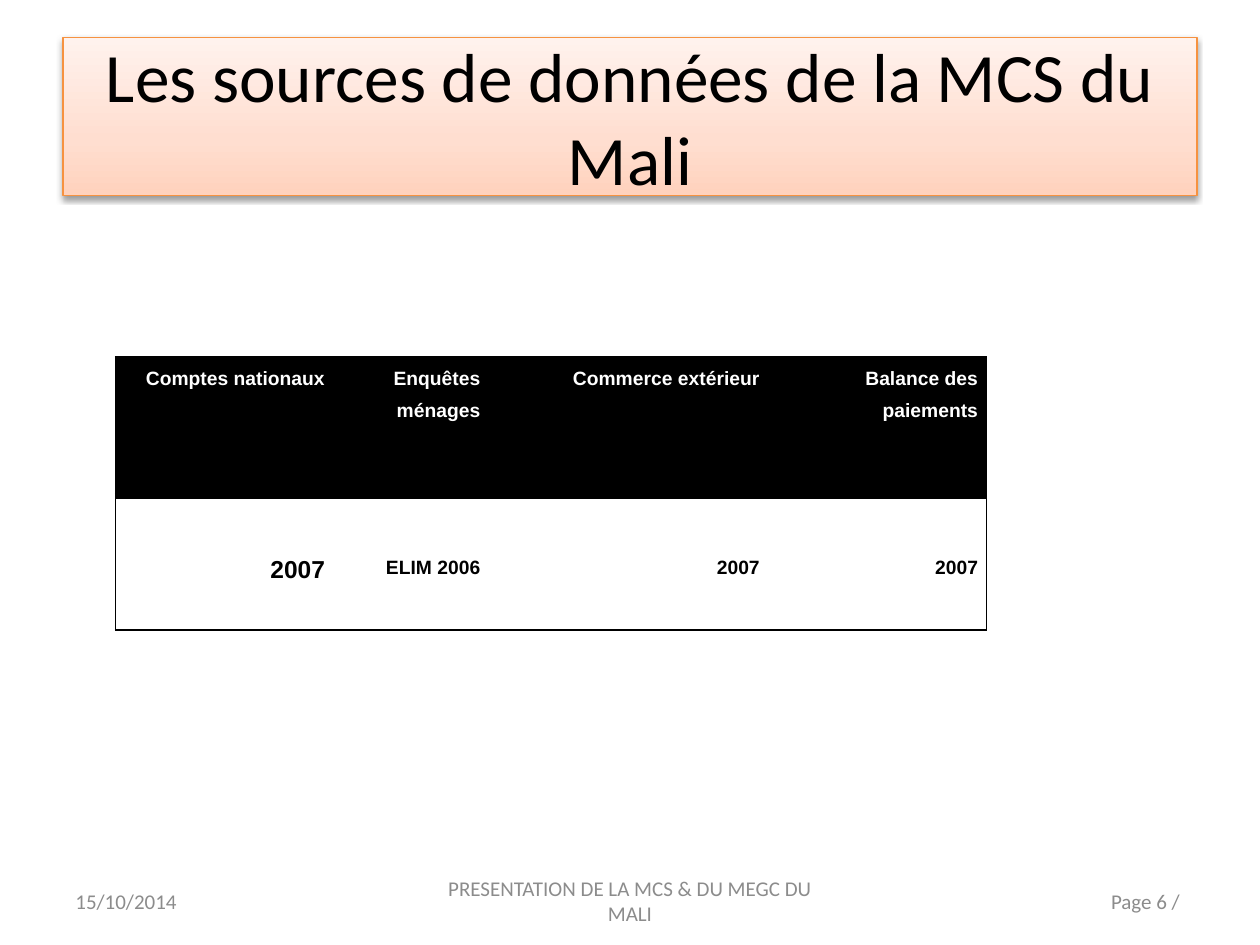
"""Build the slide on the data sources of the Mali social accounting matrix."""
from dataclasses import dataclass

from lxml import etree
from pptx import Presentation
from pptx.dml.color import RGBColor
from pptx.enum.shapes import MSO_SHAPE
from pptx.enum.text import MSO_ANCHOR, PP_ALIGN
from pptx.oxml import parse_xml
from pptx.oxml.ns import nsdecls, qn
from pptx.util import Inches, Pt

LEFT, CENTER, RIGHT = PP_ALIGN.LEFT, PP_ALIGN.CENTER, PP_ALIGN.RIGHT
TOP, MIDDLE = MSO_ANCHOR.TOP, MSO_ANCHOR.MIDDLE
RECT = MSO_SHAPE.RECTANGLE
PLAIN_TABLE = "{2D5ABB26-0587-4C30-8999-92F81FD0307C}"
COLUMNS, ROWS = 120, 90


@dataclass(frozen=True)
class Theme:
    """Colours, fonts and type sizes."""
    ink: str = "000000"
    paper: str = "FFFFFF"
    muted: str = "8C8C8C"
    accent: str = "F69240"
    gradient: tuple = ((0, "FFD2BD"), (35, "FFDED0"), (100, "FFF2ED"))
    body_font: str = "Calibri"
    table_font: str = "Arial"
    title: float = 39.6
    footer: float = 12
    cell: float = 11
    strong: float = 14


def apply(target, values):
    """Set each attribute of the target from a dict."""
    for name, value in values.items():
        setattr(target, name, value)


class SlideBuilder:
    """Draw elements on one slide, placed in grid columns and rows."""

    def __init__(self, prs, theme):
        self.theme = theme
        self.dx, self.dy = prs.slide_width / COLUMNS, prs.slide_height / ROWS
        self.s = prs.slides.add_slide(prs.slide_layouts[6])

    def box(self, x, y, w, h):
        return [int(v) for v in (x * self.dx, y * self.dy, w * self.dx, h * self.dy)]

    def text(self, tf, text, font, color, align, spacing=1.0):
        p = tf.paragraphs[0]
        apply(p, {"alignment": align, "line_spacing": spacing})
        r = p.add_run()
        r.text = text
        apply(r.font, font)
        r.font.color.rgb = RGBColor.from_string(color)

    def title(self, text, *place):
        t = self.theme
        sp = self.s.shapes.add_shape(RECT, *self.box(*place))
        sp.line.color.rgb = RGBColor.from_string(t.accent)
        sp.line.width = Pt(0.75)
        stops = "".join(f'<a:gs pos="{pos * 1000}"><a:srgbClr val="{color}"/></a:gs>'
                        for pos, color in t.gradient)
        sp.fill.background()
        fill = sp._element.spPr.find(qn("a:noFill"))
        fill.getparent().replace(fill, parse_xml(
            f'<a:gradFill {nsdecls("a")} rotWithShape="1"><a:gsLst>{stops}</a:gsLst>'
            '<a:lin ang="16200000" scaled="0"/></a:gradFill>'))
        sp.shadow.inherit = False
        sp._element.spPr.find(qn("a:effectLst")).append(parse_xml(
            f'<a:outerShdw {nsdecls("a")} blurRad="{Pt(3.1)}" dist="{Pt(1.6)}" dir="5400000" '
            f'rotWithShape="0"><a:srgbClr val="{t.ink}"><a:alpha val="38000"/></a:srgbClr>'
            '</a:outerShdw>'))
        apply(sp.text_frame, {"word_wrap": True, "vertical_anchor": MIDDLE})
        self.text(sp.text_frame, text, {"name": t.body_font, "size": Pt(t.title)}, t.ink, CENTER)

    def footer(self, text, align, *place):
        t = self.theme
        tf = self.s.shapes.add_textbox(*self.box(*place)).text_frame
        apply(tf, {"word_wrap": True, "vertical_anchor": MIDDLE})
        self.text(tf, text, {"name": t.body_font, "size": Pt(t.footer)}, t.muted, align)

    def border(self, cell, side, width):
        ln = etree.SubElement(cell._tc.get_or_add_tcPr(), qn(f"a:ln{side}"), w=str(Pt(width)))
        fill = etree.SubElement(ln, qn("a:solidFill"))
        etree.SubElement(fill, qn("a:srgbClr"), val=self.theme.ink)

    def cell(self, cell, text, header, size, borders):
        t = self.theme
        apply(cell, {"margin_left": Inches(0.07), "margin_right": Inches(0.07),
                     "margin_top": 0, "margin_bottom": 0,
                     "vertical_anchor": TOP if header else MIDDLE})
        for side, width in borders.items():
            self.border(cell, side, width)
        cell.fill.solid()
        cell.fill.fore_color.rgb = RGBColor.from_string(t.ink if header else t.paper)
        font = {"name": t.table_font, "size": Pt(size), "bold": True}
        self.text(cell.text_frame, text, font, t.paper if header else t.ink, RIGHT, 1.5)

    def table(self, data, x, y, widths, heights):
        t = self.theme
        place = self.box(x, y, sum(widths), sum(heights))
        table = self.s.shapes.add_table(len(heights), len(widths), *place).table
        table._tbl.tblPr.find(qn("a:tableStyleId")).text = PLAIN_TABLE
        for column, width in zip(table.columns, widths):
            column.width = int(width * self.dx)
        for row, height in zip(table.rows, heights):
            row.height = int(height * self.dy)
        for i, texts in enumerate(data):
            for j, text in enumerate(texts):
                borders = {"L": 0.75} if j == 0 else {}
                if j == len(widths) - 1:
                    borders["R"] = 0.75
                borders.update({"T": 4, "B": 0.75} if i else {"T": 0.75})
                size = t.strong if i and j == 0 else t.cell
                self.cell(table.cell(i, j), text, i == 0, size, borders)


def main():
    prs = Presentation()
    apply(prs, {"slide_width": Inches(10), "slide_height": Inches(7.5)})
    slide = SlideBuilder(prs, Theme())
    slide.title("Les sources de données de la MCS du Mali", 6, 3.6, 108, 15)
    slide.table([["Comptes nationaux", "Enquêtes ménages", "Commerce extérieur",
                  "Balance des paiements"],
                 ["2007", "ELIM 2006", "2007", "2007"]],
                11, 34, (20.8, 14.8, 26.6, 20.8), (13.2, 12.8))
    for text, align, x, width in (
            ("15/10/2014", LEFT, 6, 28),
            ("PRESENTATION DE LA MCS & DU MEGC DU MALI", CENTER, 41, 38),
            ("Page 6 / ", RIGHT, 86, 28)):
        slide.footer(text, align, x, 83.4, width, 4.8)
    prs.save("out.pptx")


if __name__ == "__main__":
    main()
